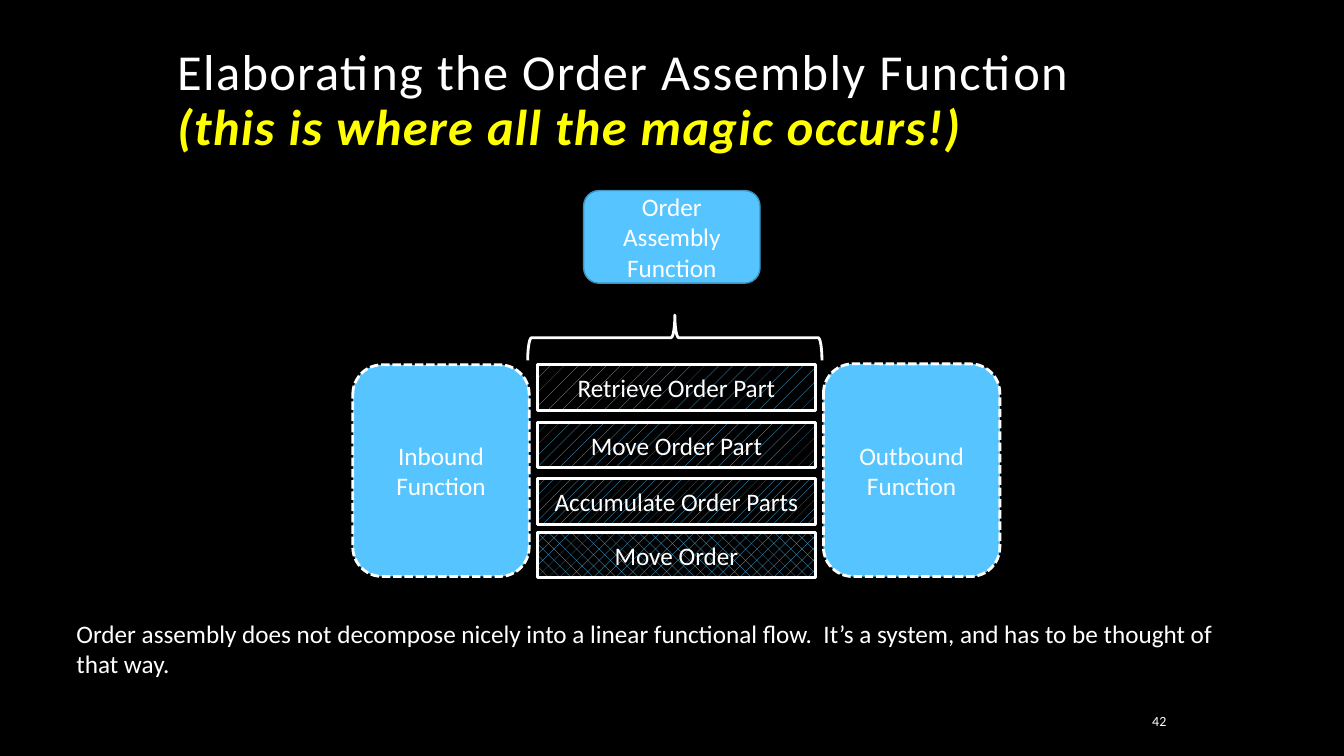
from pptx import Presentation
from pptx.dml.color import RGBColor
from pptx.enum.dml import MSO_LINE, MSO_PATTERN
from pptx.enum.shapes import MSO_SHAPE
from pptx.enum.text import MSO_ANCHOR, MSO_AUTO_SIZE, PP_ALIGN
from pptx.util import Pt

ROUND, RECT, BRACE = MSO_SHAPE.ROUNDED_RECTANGLE, MSO_SHAPE.RECTANGLE, MSO_SHAPE.LEFT_BRACE
LEFT, MID, RIGHT = PP_ALIGN.LEFT, PP_ALIGN.CENTER, PP_ALIGN.RIGHT
TOP, CENTRE = MSO_ANCHOR.TOP, MSO_ANCHOR.MIDDLE
DASH = MSO_LINE.SQUARE_DOT
BLACK, WHITE, SKY, EDGE, YELLOW = "000000", "FFFFFF", "56C5FF", "4092BD", "FFFF00"

# Content: boxes are left, top, width, height in points
TITLE = [
    ("Elaborating the Order Assembly Function", WHITE, {}),
    ("(this is where all the magic occurs!)", YELLOW, {"bold": True, "italic": True}),
]
NODES = [
    ("Order Assembly Function", (416.9, 136.1, 126, 66.2), EDGE, 1, None),
    ("Outbound Function", (588.2, 259.9, 126, 151.9), WHITE, 2, DASH),
    ("Inbound Function", (252, 260.6, 126, 151.2), WHITE, 2, DASH),
]
STEPS = [
    ("Retrieve Order Part", 260.6, MSO_PATTERN.PERCENT_5),
    ("Move Order Part", 301.7, MSO_PATTERN.PERCENT_10),
    ("Accumulate Order Parts", 342, MSO_PATTERN.PERCENT_20),
    ("Move Order", 380.2, MSO_PATTERN.PERCENT_25),
]
STEP_X, STEP_W, STEP_H = 383.8, 198.7, 32.4
NOTE = ("Order assembly does not decompose nicely into a linear functional flow.  "
        "It’s a system, and has to be thought of that way.")

deck = Presentation()
deck.slide_width, deck.slide_height = Pt(960), Pt(540)
slide = deck.slides.add_slide(deck.slide_layouts[6])


def tint(part, colour):
    part.rgb = RGBColor.from_string(colour)


def put(frame, text, align, anchor, size=18, colour=WHITE, **style):
    """Add a styled run to the first paragraph of a frame."""
    frame.word_wrap, frame.vertical_anchor = True, anchor
    para = frame.paragraphs[0]
    para.alignment = align
    run = para.add_run()
    run.text = text
    style = {"name": "Calibri", "size": Pt(size), **style}
    for key, value in style.items():
        setattr(run.font, key, value)
    tint(run.font.color, colour)
    return run


def shape(kind, box, edge, width, dash=None):
    item = slide.shapes.add_shape(kind, *map(Pt, box))
    item.shadow.inherit = False
    tint(item.line.color, edge)
    item.line.width = Pt(width)
    if dash:
        item.line.dash_style = dash
    return item


def label(*box):
    return slide.shapes.add_textbox(*map(Pt, box)).text_frame


# Background and title
slide.background.fill.solid()
tint(slide.background.fill.fore_color, BLACK)
frame = label(119.5, 30.2, 720, 108)
head = frame.paragraphs[0]
head.line_spacing = 0.9
for row, (text, colour, style) in enumerate(TITLE):
    if row:
        head.add_line_break()
    run = put(frame, text, LEFT, TOP, 36, colour, **style)
    run._r.get_or_add_rPr().set("spc", "100")

# Function nodes
for text, box, edge, width, dash in NODES:
    node = shape(ROUND, box, edge, width, dash)
    node.fill.solid()
    tint(node.fill.fore_color, SKY)
    put(node.text_frame, text, MID, CENTRE)

# Brace over the steps
brace = shape(BRACE, (465.8, 136.1, 32.4, 210.2), WHITE, 2)
brace.rotation = 90
brace.fill.background()

# Steps with denser patterns going down
for text, top, pattern in STEPS:
    step = shape(RECT, (STEP_X, top, STEP_W, STEP_H), WHITE, 2)
    step.fill.patterned()
    step.fill.pattern = pattern
    tint(step.fill.fore_color, SKY)
    tint(step.fill.back_color, BLACK)
    put(step.text_frame, text, MID, CENTRE)

# Note and page number
frame = label(47.5, 437.8, 840.2, 51.1)
put(frame, NOTE, LEFT, TOP)
frame.auto_size = MSO_AUTO_SIZE.SHAPE_TO_FIT_TEXT
put(label(774, 504, 66.2, 21.6), "42", RIGHT, CENTRE, 10)

deck.save("out.pptx")
